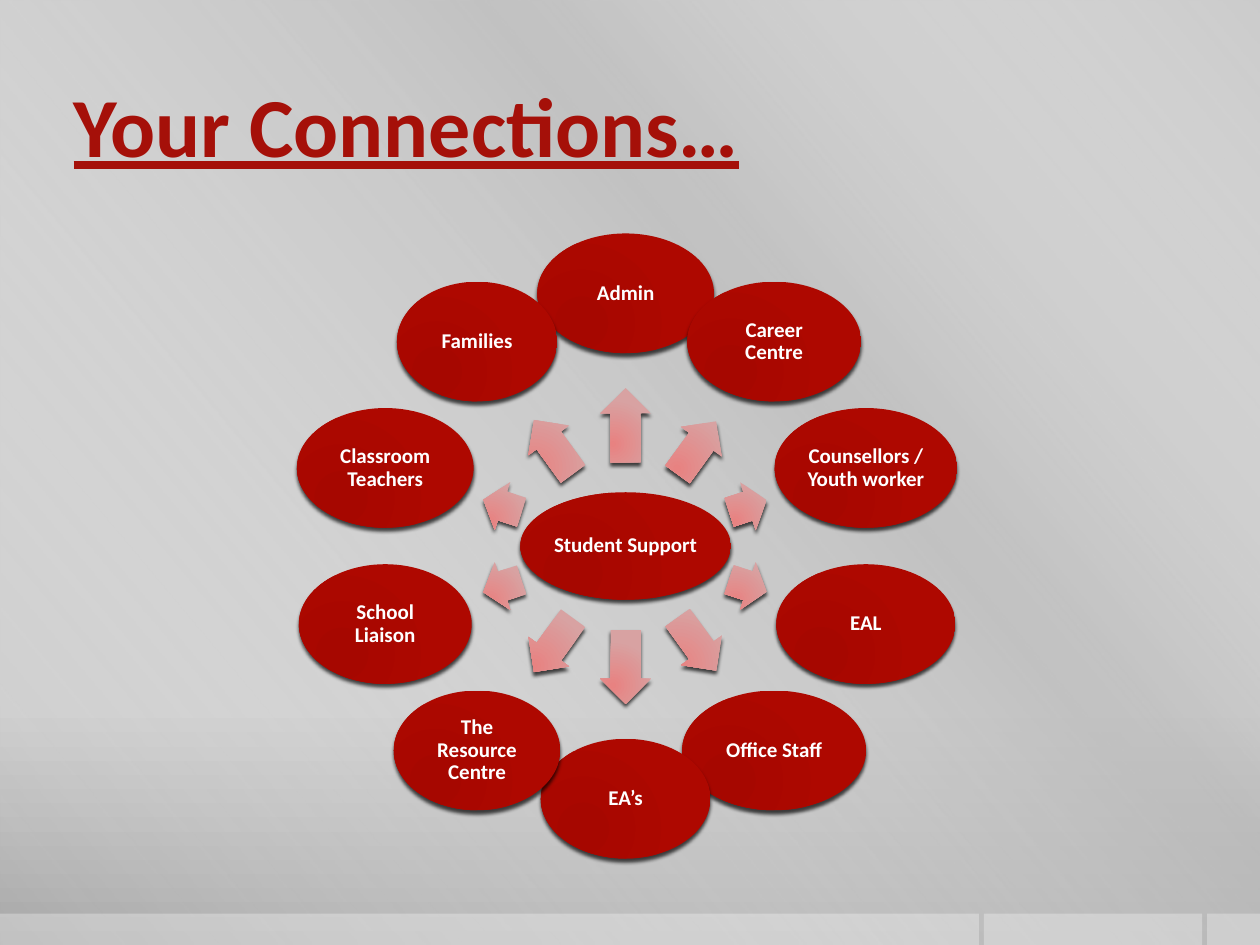
from math import cos, radians, sin

from lxml.etree import SubElement
from pptx import Presentation
from pptx.dml.color import RGBColor
from pptx.enum.shapes import MSO_SHAPE
from pptx.enum.text import MSO_ANCHOR, PP_ALIGN
from pptx.oxml.ns import qn
from pptx.util import Pt

WHITE = RGBColor(0xFF, 0xFF, 0xFF)
BLACK = RGBColor(0, 0, 0)
GREY = RGBColor(0xBF, 0xBF, 0xBF)
TITLE_RED = RGBColor(0xA5, 0x10, 0x09)
BACKDROP = [(0, RGBColor(0xCB, 0xCB, 0xCB), 100),
            (76, RGBColor(0xC8, 0xC8, 0xC8), 100),
            (100, RGBColor(0xA7, 0xA7, 0xA7), 100)]
SHEEN = [(0, WHITE, 0), (34, GREY, 61), (38, GREY, 76), (100, WHITE, 0)]
NODE_RED = [(0, RGBColor(0xA6, 0x07, 0x00), 100),
            (100, RGBColor(0xAE, 0x08, 0x00), 100)]
ARROW_PINK = [(0, RGBColor(0xE8, 0x82, 0x81), 100),
              (100, RGBColor(0xD8, 0xA2, 0xA2), 100)]

FONT = "Calibri"
CENTRE_X, CENTRE_Y = 357.5, 312
RADIUS = 144.4
NODE_HEIGHT = 68.4
ARROW_HEIGHT = 28.8

# Clockwise from the top: label, ellipse width, arrow length, arrow distance
CONNECTIONS = [
    ("Admin", 101, 42.5, 69),
    ("Career Centre", 99.4, 37.5, 69.3),
    ("Counsellors / Youth worker", 104.4, 22.5, 73.5),
    ("EAL", 102.4, 22.5, 73.5),
    ("Office Staff", 105.2, 37.5, 69.3),
    ("EA’s", 97, 42.5, 69),
    ("The Resource Centre", 95.2, 38, 70),
    ("School Liaison", 98.8, 23, 74),
    ("Classroom Teachers", 101, 23, 74),
    ("Families", 91.6, 38, 70),
]


def add_color(parent, color, opacity):
    node = SubElement(parent, qn("a:srgbClr"), val=str(color))
    if opacity < 100:
        SubElement(node, qn("a:alpha"), val=str(opacity * 1000))


def set_gradient(properties, stops, angle=None):
    """Swap the solid fill for a linear gradient, or a radial one without angle."""
    solid = properties.find(qn("a:solidFill"))
    gradient = SubElement(properties, qn("a:gradFill"), rotWithShape="1")
    properties.replace(solid, gradient)
    stop_list = SubElement(gradient, qn("a:gsLst"))
    for position, color, opacity in stops:
        stop = SubElement(stop_list, qn("a:gs"), pos=str(position * 1000))
        add_color(stop, color, opacity)
    if angle is None:
        shade = SubElement(gradient, qn("a:path"), path="circle")
        SubElement(shade, qn("a:fillToRect"),
                   l="50000", t="100000", r="100000", b="50000")
    else:
        SubElement(gradient, qn("a:lin"), ang=str(angle * 60000), scaled="0")


def add_shadow(shape):
    effects = shape.element.spPr.find(qn("a:effectLst"))
    shadow = SubElement(effects, qn("a:outerShdw"), blurRad=str(Pt(2)),
                        dist=str(Pt(2)), dir="5400000", rotWithShape="0")
    add_color(shadow, BLACK, 70)


def add_plain_shape(slide, kind, left, top, width, height):
    shape = slide.shapes.add_shape(kind, Pt(left), Pt(top), Pt(width), Pt(height))
    shape.shadow.inherit = False
    shape.fill.solid()
    shape.fill.fore_color.rgb = WHITE
    shape.line.fill.background()
    return shape


def write_text(shape, text, size, color, align, inset_x, inset_y,
               underline=False, line_spacing=1.0):
    frame = shape.text_frame
    frame.word_wrap = True
    frame.vertical_anchor = MSO_ANCHOR.MIDDLE
    frame.margin_left = frame.margin_right = Pt(inset_x)
    frame.margin_top = frame.margin_bottom = Pt(inset_y)
    para = frame.paragraphs[0]
    para.alignment = align
    para.line_spacing = line_spacing
    span = para.add_run()
    span.text = text
    span.font.name = FONT
    span.font.size = Pt(size)
    span.font.bold = True
    span.font.underline = underline
    span.font.color.rgb = color


def add_backdrop(slide):
    slide.background.fill.solid()
    set_gradient(slide.element.cSld.bg.bgPr, BACKDROP, angle=90)
    sheen = add_plain_shape(slide, MSO_SHAPE.RECTANGLE, 0, 0, 720, 540)
    set_gradient(sheen.element.spPr, SHEEN, angle=140)
    for left, width in ((689.8, 30.2), (562.3, 124.6), (0, 559.4)):
        bar = add_plain_shape(slide, MSO_SHAPE.RECTANGLE, left, 522, width, 18)
        color = bar.element.spPr.find(qn("a:solidFill"))[0]
        SubElement(color, qn("a:alpha"), val="30000")


def add_title(slide, text):
    box = slide.shapes.add_textbox(Pt(42), Pt(40.5), Pt(545.8), Pt(60))
    write_text(box, text, size=48, color=TITLE_RED, align=PP_ALIGN.LEFT,
               inset_x=0, inset_y=3.6, underline=True)


def add_centred(slide, kind, x, y, width, height, stops):
    shape = add_plain_shape(slide, kind, x - width / 2, y - height / 2, width, height)
    set_gradient(shape.element.spPr, stops)
    add_shadow(shape)
    return shape


def add_node(slide, text, x, y, width, height=NODE_HEIGHT):
    node = add_centred(slide, MSO_SHAPE.OVAL, x, y, width, height, NODE_RED)
    write_text(node, text, size=12, color=WHITE, align=PP_ALIGN.CENTER,
               inset_x=1.2, inset_y=1.2, line_spacing=0.9)


def add_arrow(slide, x, y, length, rotation):
    arrow = add_centred(slide, MSO_SHAPE.RIGHT_ARROW, x, y, length,
                        ARROW_HEIGHT, ARROW_PINK)
    arrow.adjustments[0] = 0.6
    arrow.adjustments[1] = 0.5
    arrow.rotation = rotation


def point_on_ring(angle, distance):
    return (CENTRE_X + distance * cos(radians(angle)),
            CENTRE_Y + distance * sin(radians(angle)))


def main():
    deck = Presentation()
    deck.slide_width, deck.slide_height = Pt(720), Pt(540)
    page = deck.slides.add_slide(deck.slide_layouts[6])
    add_backdrop(page)
    add_title(page, "Your Connections…")
    add_node(page, "Student Support", CENTRE_X, CENTRE_Y, width=120.4, height=61.4)
    step = 360 / len(CONNECTIONS)
    for index, (label, width, length, distance) in enumerate(CONNECTIONS):
        angle = (270 + index * step) % 360
        add_arrow(page, *point_on_ring(angle, distance), length, angle)
        add_node(page, label, *point_on_ring(angle, RADIUS), width)
    deck.save("out.pptx")


if __name__ == "__main__":
    main()
